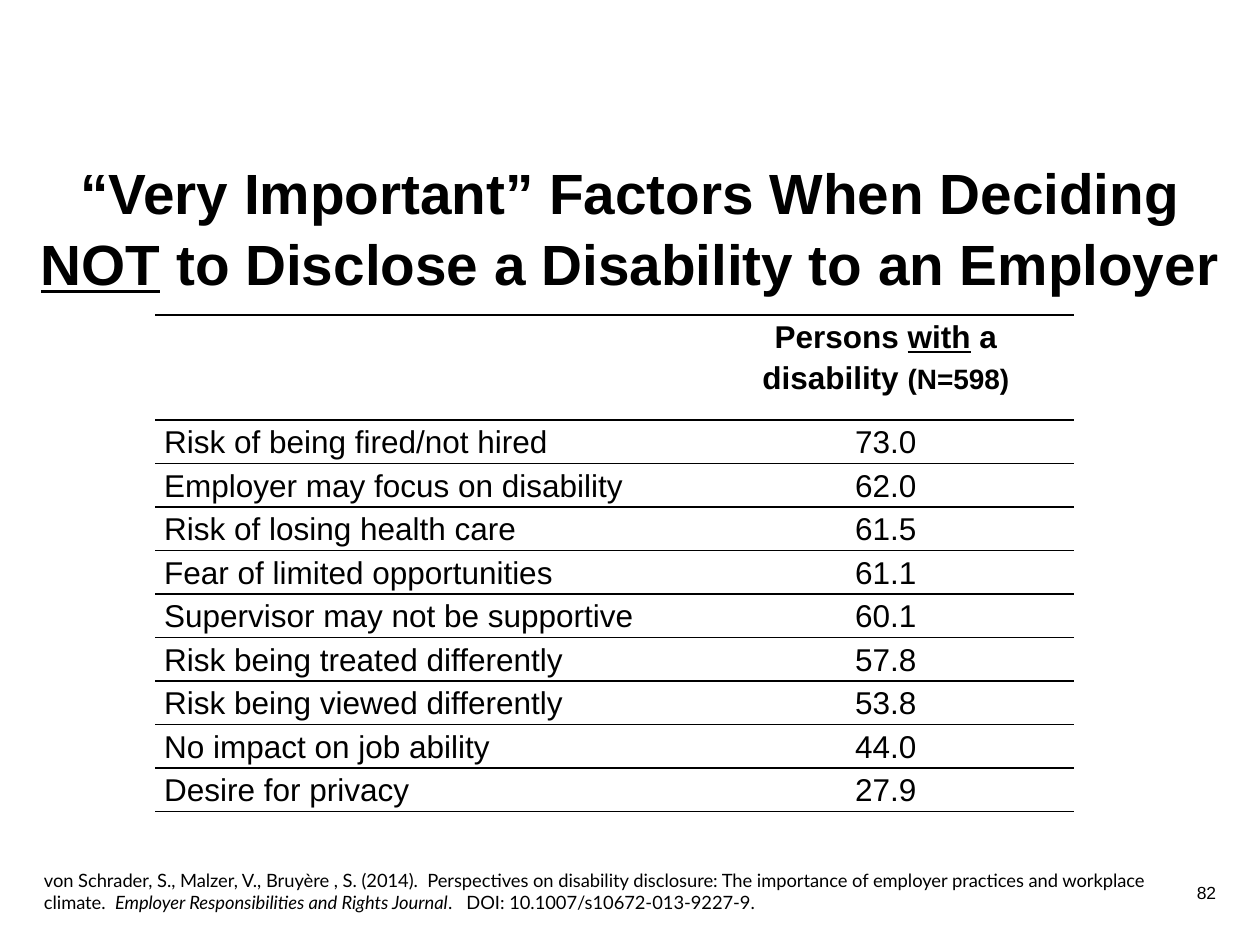
from dataclasses import dataclass

from lxml.etree import SubElement
from pptx import Presentation
from pptx.dml.color import RGBColor
from pptx.enum.text import MSO_ANCHOR, MSO_AUTO_SIZE, PP_ALIGN
from pptx.oxml.ns import qn
from pptx.util import Pt


@dataclass(frozen=True)
class Theme:
    ink: RGBColor = RGBColor(0, 0, 0)
    paper: RGBColor = RGBColor(255, 255, 255)
    sans: str = "Arial"
    citation_face: str = "Lato"
    title: float = 32.4
    table: float = 18
    sample: float = 16
    citation: float = 10.5
    number: float = 10


theme = Theme()


def write(paragraph, parts, size, face=theme.sans, bold=False, align=PP_ALIGN.LEFT):
    paragraph.alignment = align
    font = paragraph.font
    font.name, font.size, font.bold = face, Pt(size), bold
    font.color.rgb = theme.ink
    for words, emphasis in parts:
        run = paragraph.add_run()
        run.text = words
        for attribute, value in emphasis.items():
            setattr(run.font, attribute, value)


def rule_cell(cell):
    properties = cell._tc.get_or_add_tcPr()
    for side in ("lnL", "lnR"):
        SubElement(SubElement(properties, qn(f"a:{side}"), w="0"), qn("a:noFill"))
    for side in ("lnT", "lnB"):
        line = SubElement(properties, qn(f"a:{side}"), w=str(Pt(1)))
        fill = SubElement(line, qn("a:solidFill"))
        SubElement(fill, qn("a:srgbClr"), val=str(theme.ink))
    cell.fill.solid()
    cell.fill.fore_color.rgb = theme.paper


presentation = Presentation()
presentation.slide_width, presentation.slide_height = Pt(720), Pt(540)
slide = presentation.slides.add_slide(presentation.slide_layouts[5])

title = slide.shapes.title
title.left, title.top, title.width, title.height = Pt(0), Pt(84), Pt(720), Pt(90)
title.text_frame.auto_size = MSO_AUTO_SIZE.NONE
title.text_frame.vertical_anchor = MSO_ANCHOR.MIDDLE
heading = title.text_frame.paragraphs[0]
heading.line_spacing = 1.05
write(heading, [
    ("“Very Important” Factors When Deciding ", {}),
    ("NOT", {"underline": True}),
    (" to Disclose a Disability to an Employer", {}),
], theme.title, bold=True, align=PP_ALIGN.CENTER)

factors = [
    ("Risk of being fired/not hired", "73.0"),
    ("Employer may focus on disability", "62.0"),
    ("Risk of losing health care", "61.5"),
    ("Fear of limited opportunities", "61.1"),
    ("Supervisor may not be supportive", "60.1"),
    ("Risk being treated differently", "57.8"),
    ("Risk being viewed differently", "53.8"),
    ("No impact on job ability", "44.0"),
    ("Desire for privacy", "27.9"),
]
column_head = [
    ("Persons ", {}),
    ("with", {"underline": True}),
    (" a disability ", {}),
    ("(N=598)", {"size": Pt(theme.sample)}),
]
rows = [([], column_head)]
rows += [([(factor, {})], [(percent, {})]) for factor, percent in factors]

head_height, row_height = 60, 24.86
factor_width, percent_width = 310.3, 214.6
ratings = slide.shapes.add_table(
    len(rows), 2, Pt(88.6), Pt(180), Pt(factor_width + percent_width),
    Pt(head_height + row_height * len(factors)),
).table
ratings.horz_banding = False
ratings.first_row = False
ratings.columns[0].width = Pt(factor_width)
ratings.columns[1].width = Pt(percent_width)

for index, row in enumerate(rows):
    ratings.rows[index].height = Pt(row_height if index else head_height)
    for column, parts in enumerate(row):
        cell = ratings.cell(index, column)
        rule_cell(cell)
        cell.margin_left = cell.margin_right = Pt(5.2)
        cell.margin_top = cell.margin_bottom = Pt(0)
        entry = cell.text_frame.paragraphs[0]
        entry.line_spacing = 1.15
        write(entry, parts, theme.table, bold=index == 0,
              align=PP_ALIGN.CENTER if column else PP_ALIGN.LEFT)

citation = slide.shapes.add_textbox(Pt(18), Pt(493.2), Pt(653.8), Pt(45)).text_frame
citation.word_wrap = True
write(citation.paragraphs[0], [
    ("von Schrader, S., Malzer, V., Bruyère , S. (2014).  Perspectives on disability "
     "disclosure: The importance of employer practices and workplace climate.  ", {}),
    ("Employer Responsibilities and Rights Journal", {"italic": True}),
    (".   DOI: 10.1007/s10672-013-9227-9.", {}),
], theme.citation, face=theme.citation_face)

page_number = slide.shapes.add_textbox(Pt(534), Pt(500.4), Pt(168), Pt(28.8)).text_frame
page_number.word_wrap = True
write(page_number.paragraphs[0], [("82", {})], theme.number, align=PP_ALIGN.RIGHT)

presentation.save("out.pptx")
